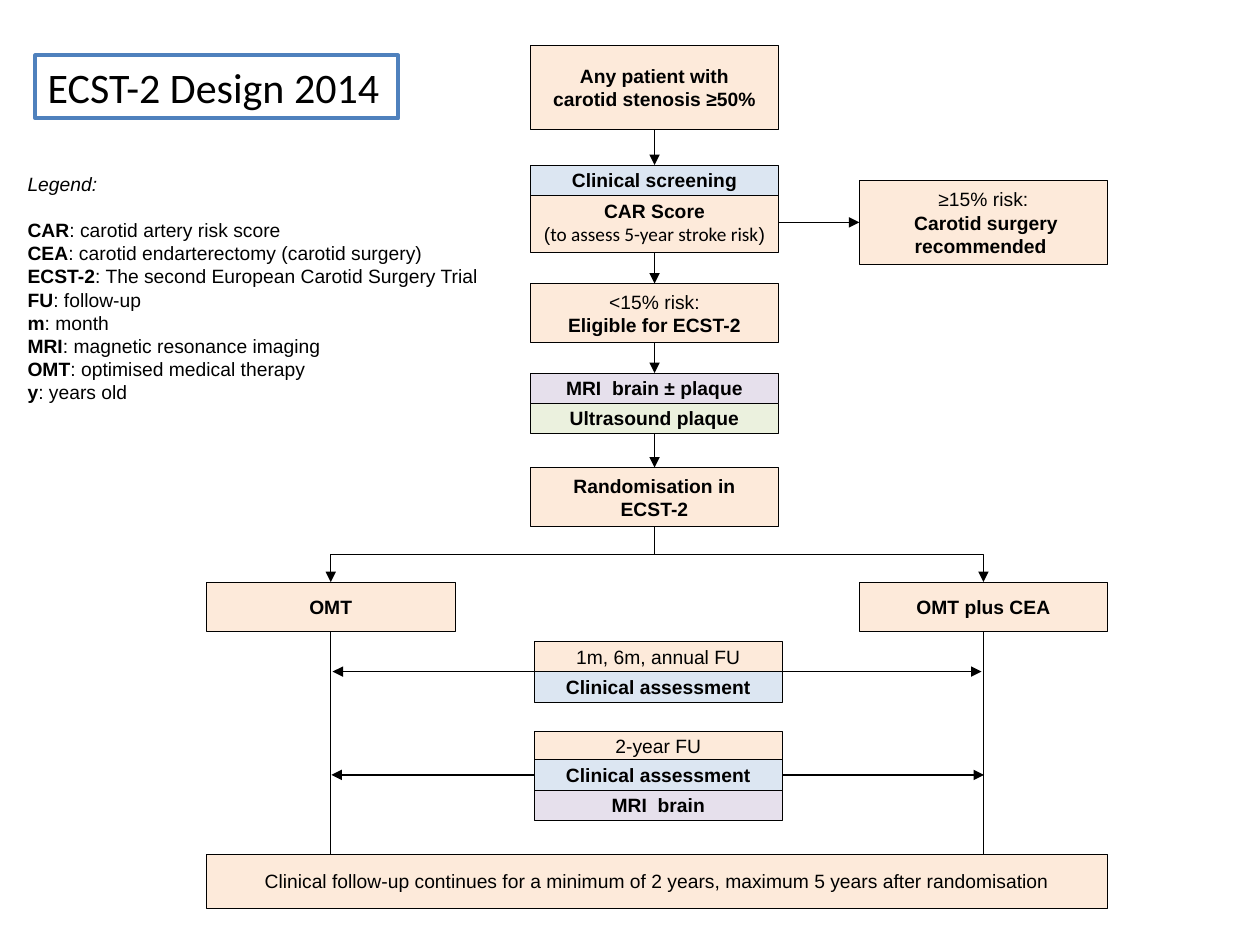
from lxml import etree
from pptx import Presentation
from pptx.dml.color import RGBColor
from pptx.enum.shapes import MSO_CONNECTOR as Line, MSO_SHAPE as Shape
from pptx.enum.text import MSO_ANCHOR as Anchor, PP_ALIGN as Align
from pptx.oxml.ns import qn
from pptx.util import Inches, Pt

COLORS = {
    "black": "000000",
    "peach": "FDEADA",
    "blue": "DCE6F2",
    "purple": "E6E0EC",
    "green": "EBF1DE",
    "frame": "4F81BD",
}
TOP, LEFT, BOTTOM, RIGHT = range(4)
BOX_W, ROW_H = 1.97, 0.24
MAIN_X, FU_X, OMT_X, CEA_X = 4.21, 4.24, 1.64, 6.82

LEGEND = [
    ("CAR", "carotid artery risk score"),
    ("CEA", "carotid endarterectomy (carotid surgery)"),
    ("ECST-2", "The second European Carotid Surgery Trial"),
    ("FU", "follow-up"),
    ("m", "month"),
    ("MRI", "magnetic resonance imaging"),
    ("OMT", "optimised medical therapy"),
    ("y", "years old"),
]


def rgb(name):
    return RGBColor.from_string(COLORS[name])


def style(r, bold=False, italic=False, font="Arial", size=11):
    r.font.name, r.font.size = font, Pt(size)
    r.font.bold, r.font.italic = bold, italic
    r.font.color.rgb = rgb("black")


def write(tf, lines, align=Align.LEFT):
    """Fill a frame; each line is a list of (text, style options) runs."""
    for i, line in enumerate(lines):
        p = tf.add_paragraph() if i else tf.paragraphs[0]
        p.alignment = align
        for text, options in line:
            r = p.add_run()
            r.text = text
            style(r, **options)


def plain(text):
    return [(text, {})]


def bold(text):
    return [(text, {"bold": True})]


def box(s, x, y, h, lines, fill="peach", w=BOX_W):
    sp = s.shapes.add_shape(Shape.FLOWCHART_PROCESS, Inches(x), Inches(y), Inches(w), Inches(h))
    sp.shadow.inherit = False
    sp.fill.solid()
    sp.fill.fore_color.rgb = rgb(fill)
    sp.line.color.rgb = rgb("black")
    sp.line.width = Pt(0.25)
    tf = sp.text_frame
    tf.word_wrap, tf.vertical_anchor = True, Anchor.MIDDLE
    write(tf, lines, Align.CENTER)
    return sp


def arrow(s, start, end, kind=Line.STRAIGHT, begin=None, finish=None):
    """Draw an arrow; begin and finish are optional (shape, side) joins."""
    c = s.shapes.add_connector(kind, *(Inches(v) for v in (*start, *end)))
    if begin:
        c.begin_connect(*begin)
    if finish:
        c.end_connect(*finish)
    c.line.color.rgb = rgb("black")
    c.line.width = Pt(0.75)
    sp_pr = c._element.spPr
    etree.SubElement(sp_pr.find(qn("a:ln")), qn("a:tailEnd"), type="triangle")
    etree.SubElement(sp_pr, qn("a:effectLst"))
    return c


def down_arrow(s, upper, lower):
    arrow(s, (0, 0), (0, 0), begin=(upper, BOTTOM), finish=(lower, TOP))


def branch(s, upper, lower):
    """Draw an elbow that leaves downwards, runs sideways and ends downwards."""
    c = arrow(s, (0, 0), (0, 0), Line.ELBOW, (upper, BOTTOM), (lower, TOP))
    to_right = lower.left > upper.left
    mid_x, mid_y = c.left + c.width // 2, c.top + c.height // 2
    w, h = c.height, c.width
    c.left, c.top, c.width, c.height = mid_x - w // 2, mid_y - h // 2, w, h
    xfrm = c._element.spPr.find(qn("a:xfrm"))
    xfrm.set("rot", str((270 if to_right else 90) * 60000))
    xfrm.set("flipH", "1" if to_right else "0")
    xfrm.set("flipV", "0")


def text_box(s, x, y, w, h, lines, wrap=True):
    sp = s.shapes.add_textbox(Inches(x), Inches(y), Inches(w), Inches(h))
    sp.text_frame.word_wrap = wrap
    write(sp.text_frame, lines)
    return sp


def title_and_legend(s):
    title = text_box(s, 0.28, 0.44, 2.88, 0.5,
                     [[("ECST-2 Design 2014", {"font": "Calibri", "size": 24})]], wrap=False)
    title.line.color.rgb = rgb("frame")
    title.line.width = Pt(2.25)

    entries = [bold(term) + plain(": " + meaning) for term, meaning in LEGEND]
    legend = text_box(s, 0.12, 1.32, 3.79, 1.95, [[("Legend:", {"italic": True})]] + entries)
    legend.text_frame.paragraphs[0].space_after = Pt(13)


def screening(s):
    """Draw the steps up to randomisation and return the last box."""
    patient = box(s, MAIN_X, 0.36, 0.67, [bold("Any patient with"), bold("carotid stenosis ≥50%")])
    score = box(s, MAIN_X, 1.53, 0.47, [
        bold("CAR Score"),
        plain("(") + [("to assess 5-year stroke risk", {"font": "Calibri"})] + plain(")"),
    ])
    clinical = box(s, MAIN_X, 1.31, ROW_H, [bold("Clinical screening")], "blue")
    surgery = box(s, CEA_X, 1.43, 0.67,
                  [plain("≥15% risk:"), plain(" ") + bold("Carotid surgery recommended ")])
    eligible = box(s, MAIN_X, 2.25, 0.47, [plain("<15% risk:"), bold("Eligible for ECST-2")])
    mri = box(s, MAIN_X, 2.96, ROW_H, [bold("MRI  brain ± plaque")], "purple")
    ultrasound = box(s, MAIN_X, 3.2, ROW_H, [bold("Ultrasound plaque")], "green")
    randomised = box(s, MAIN_X, 3.71, 0.47, [bold("Randomisation in ECST-2")])

    for upper, lower in ((patient, clinical), (score, eligible),
                         (eligible, mri), (ultrasound, randomised)):
        down_arrow(s, upper, lower)
    arrow(s, (6.18, 1.76), (6.82, 1.76), begin=(score, RIGHT), finish=(surgery, LEFT))
    return randomised


def follow_up(s, randomised):
    for x, name in ((OMT_X, "OMT"), (CEA_X, "OMT plus CEA")):
        arm = box(s, x, 4.62, 0.39, [bold(name)])
        branch(s, randomised, arm)
        center = x + BOX_W / 2
        arrow(s, (center, 5.01), (center, 6.94), begin=(arm, BOTTOM))

    box(s, FU_X, 5.09, ROW_H, [plain("1m, 6m, annual FU")])
    box(s, FU_X, 5.33, ROW_H, [bold("Clinical assessment")], "blue")
    box(s, FU_X, 5.8, ROW_H, [plain("2-year FU")])
    assessment = box(s, FU_X, 6.03, ROW_H, [bold("Clinical assessment")], "blue")
    box(s, FU_X, 6.27, ROW_H, [bold("MRI  brain")], "purple")

    arrow(s, (FU_X, 5.33), (2.64, 5.33))
    arrow(s, (6.18, 5.33), (7.79, 5.33))
    arrow(s, (FU_X, 6.15), (2.63, 6.15), begin=(assessment, LEFT))
    arrow(s, (6.21, 6.15), (7.81, 6.15), begin=(assessment, RIGHT))

    box(s, OMT_X, 6.78, 0.43, [plain(
        "Clinical follow-up continues for a minimum of 2 years, "
        "maximum 5 years after randomisation")], w=CEA_X + BOX_W - OMT_X)


def main():
    prs = Presentation()
    prs.slide_width, prs.slide_height = Inches(10), Inches(7.5)
    s = prs.slides.add_slide(prs.slide_layouts[6])
    title_and_legend(s)
    follow_up(s, screening(s))
    prs.save("out.pptx")


if __name__ == "__main__":
    main()
